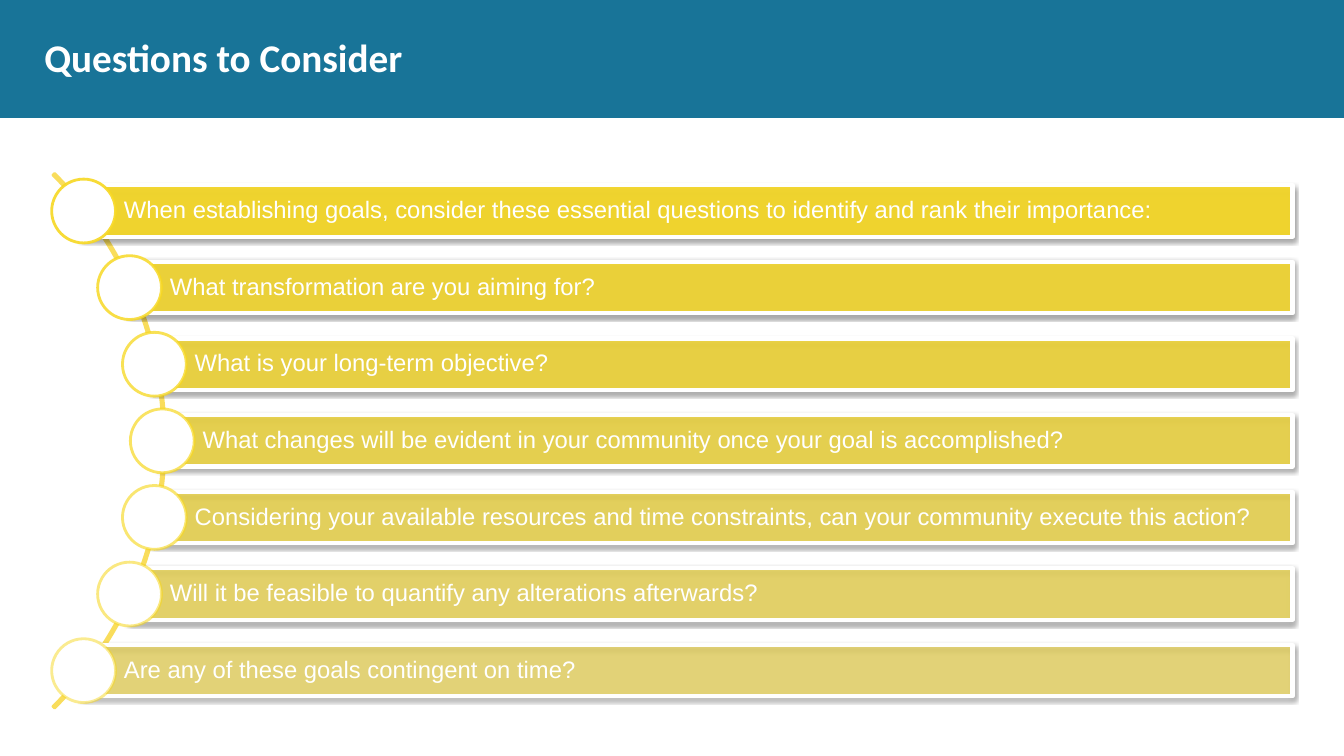
import math
from dataclasses import dataclass

from lxml import etree
from pptx import Presentation
from pptx import util as u
from pptx.dml.color import RGBColor
from pptx.enum import shapes, text
from pptx.oxml.ns import qn

# Grid of square cells, 40 columns by 22.5 rows
CELL = u.Inches(1) / 3
COLS, ROWS = 40, 22.5

BLUE = RGBColor(0x18, 0x74, 0x98)
GOLD = RGBColor(0xF7, 0xD8, 0x22)
PALE = RGBColor(0xF9, 0xDD, 0x5C)
WHITE = RGBColor(0xFF, 0xFF, 0xFF)

# Curve and the rows that follow it, in cells
MID_X, MID_Y = -6.33, 13.12
CURVE = 11.25
TRACK = 11.16
STEP = 2.28
DISC = 1.9
BAR = 1.53
RIGHT = 38.47

ASKS = [
    "When establishing goals, consider these essential questions to identify and rank their importance:",
    "What transformation are you aiming for?",
    "What is your long-term objective?",
    "What changes will be evident in your community once your goal is accomplished?",
    "Considering your available resources and time constraints, can your community execute this action?",
    "Will it be feasible to quantify any alterations afterwards?",
    "Are any of these goals contingent on time?",
]


@dataclass
class Box:
    x: float
    y: float
    w: float
    h: float

    def emu(self) -> list[int]:
        return [round(n * CELL) for n in (self.x, self.y, self.w, self.h)]


@dataclass
class Ask:
    words: str
    x: float
    y: float
    alpha: float


def fade(part, alpha: float) -> None:
    """Set the opacity, in percent, of the solid fill inside part."""
    color = part.find(qn("a:solidFill"))[0]
    etree.SubElement(color, qn("a:alpha"), val=str(round(alpha * 1000)))


def draw(slide, kind, box: Box, fill=None, line=None, width: float = 2):
    shape = slide.shapes.add_shape(kind, *box.emu())
    shape.shadow.inherit = False
    if fill is None:
        shape.fill.background()
    else:
        shape.fill.solid()
        shape.fill.fore_color.rgb = fill
    if line is None:
        shape.line.fill.background()
    else:
        shape.line.color.rgb = line
        shape.line.width = u.Pt(width)
    return shape


def shade(shape) -> None:
    """Add a soft black shadow just below the shape."""
    fx = shape._element.spPr.find(qn("a:effectLst"))
    drop = etree.SubElement(fx, qn("a:outerShdw"), blurRad=str(u.Pt(3.1)),
                            dist=str(u.Pt(1.6)), dir="5400000", rotWithShape="0")
    tone = etree.SubElement(drop, qn("a:srgbClr"), val="000000")
    etree.SubElement(tone, qn("a:alpha"), val="38000")


def write(slide, words: str, box: Box, *, size: float, font: str, bold: bool = False,
          left: float = 0, pad: float = 0, lead: float = 1) -> None:
    frame = slide.shapes.add_textbox(*box.emu()).text_frame
    frame.word_wrap = True
    frame.vertical_anchor = text.MSO_ANCHOR.MIDDLE
    frame.margin_left = u.Inches(left)
    frame.margin_top = frame.margin_right = frame.margin_bottom = u.Inches(pad)
    para = frame.paragraphs[0]
    para.line_spacing = lead
    run = para.add_run()
    run.text = words
    run.font.size = u.Pt(size)
    run.font.name = font
    run.font.bold = bold
    run.font.color.rgb = WHITE


def add_ask(slide, ask: Ask) -> None:
    # Bar, its words, then the disc on top
    box = Box(ask.x, ask.y - BAR / 2, RIGHT - ask.x, BAR)
    bar = draw(slide, shapes.MSO_SHAPE.RECTANGLE, box, GOLD, WHITE, 3)
    fade(bar._element.spPr, ask.alpha)
    shade(bar)
    write(slide, ask.words, box, size=17, font="Arial", left=0.4, pad=0.05, lead=0.9)
    ring = Box(ask.x - DISC / 2, ask.y - DISC / 2, DISC, DISC)
    disc = draw(slide, shapes.MSO_SHAPE.OVAL, ring, WHITE, GOLD)
    fade(disc._element.spPr.find(qn("a:ln")), ask.alpha)


def main() -> None:
    deck = Presentation()
    deck.slide_width = round(COLS * CELL)
    deck.slide_height = round(ROWS * CELL)
    slide = deck.slides.add_slide(deck.slide_layouts[6])

    # Header
    draw(slide, shapes.MSO_SHAPE.RECTANGLE, Box(0, 0, COLS, 3.51), BLUE)
    write(slide, "Questions to Consider", Box(1.32, 0.57, 37.38, 2.22),
          size=28, font="Calibri", bold=True)

    # Curve behind the discs
    arc = draw(slide, shapes.MSO_SHAPE.BLOCK_ARC,
               Box(MID_X - CURVE, MID_Y - CURVE, 2 * CURVE, 2 * CURVE), line=PALE)
    for i, value in enumerate((189, 27, 0.003)):
        arc.adjustments[i] = value

    # Questions, set along the curve and fading from 90 to 50 percent
    last = len(ASKS) - 1
    for i, words in enumerate(ASKS):
        rise = (i - last / 2) * STEP
        x = MID_X + math.sqrt(TRACK ** 2 - rise ** 2)
        add_ask(slide, Ask(words, x, MID_Y + rise, 90 - 40 * i / last))

    deck.save("out.pptx")


if __name__ == "__main__":
    main()
